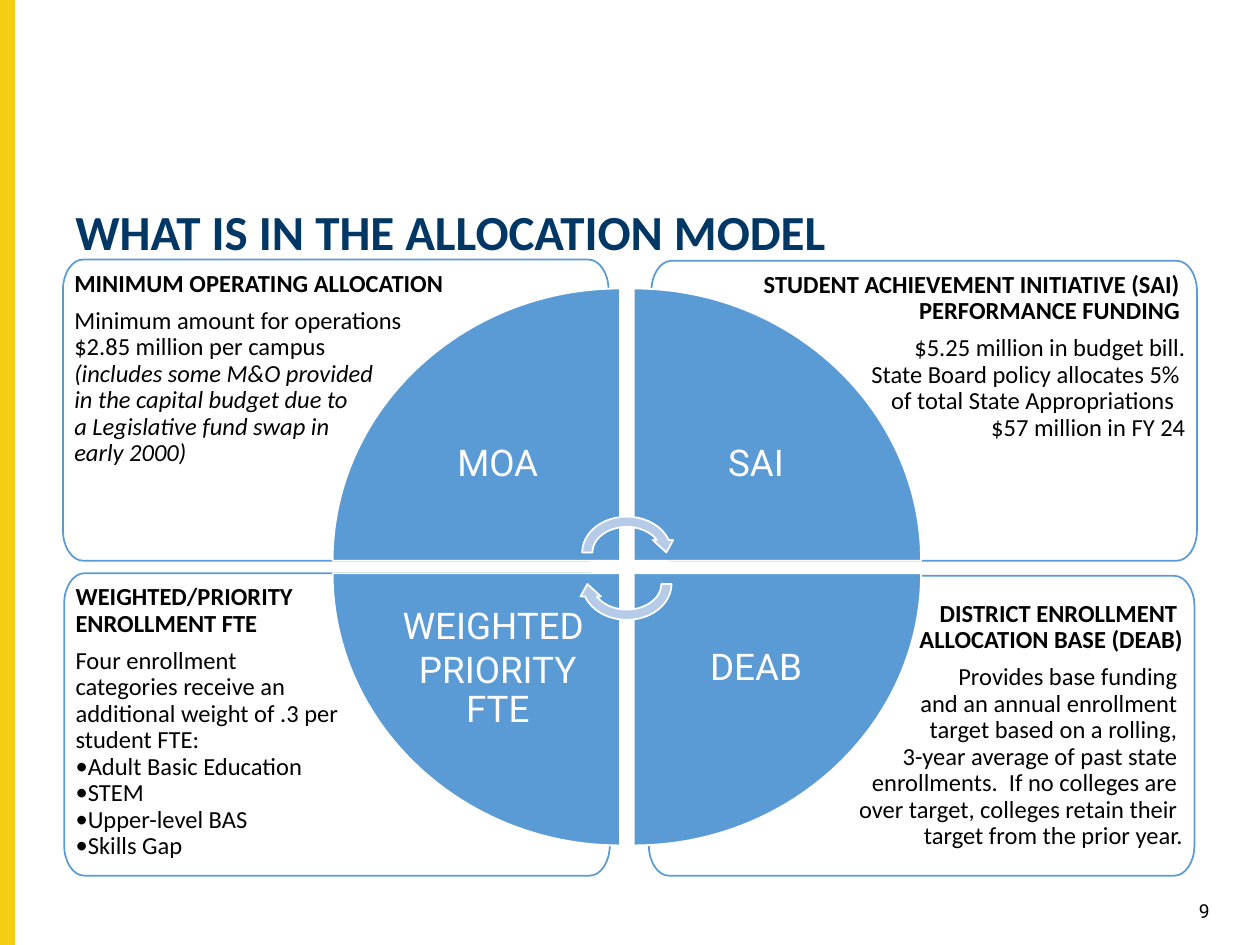
from dataclasses import dataclass

from lxml import etree
from pptx import Presentation
from pptx.dml.color import RGBColor
from pptx.enum.shapes import MSO_SHAPE
from pptx.enum.text import MSO_ANCHOR, PP_ALIGN
from pptx.oxml.ns import qn
from pptx.util import Inches, Pt

RECT = MSO_SHAPE.RECTANGLE
CIRCULAR_ARROW = MSO_SHAPE.CIRCULAR_ARROW
LEFT, CENTER, RIGHT = PP_ALIGN.LEFT, PP_ALIGN.CENTER, PP_ALIGN.RIGHT
TOP, MIDDLE = MSO_ANCHOR.TOP, MSO_ANCHOR.MIDDLE


@dataclass(frozen=True)
class Theme:
    accent: str = "F4CE12"
    title: str = "003764"
    text: str = "000000"
    white: str = "FFFFFF"
    blue: str = "5B9BD5"
    arrow: str = "B5CBE7"
    body_font: str = "Calibri"
    label_font: str = "Roboto"
    title_size: int = 28
    label_size: int = 21
    body_size: int = 14
    number_size: int = 11


class SlideBuilder:
    ARC = 0.55    # control point distance of a quarter arc, in radii

    def __init__(self, slide, theme):
        self.s, self.t = slide, theme

    def style(self, sp, fill, line):
        sp.shadow.inherit = False
        sp.fill.solid()
        sp.fill.fore_color.rgb = RGBColor.from_string(fill)
        sp.line.color.rgb = RGBColor.from_string(line)
        sp.line.width = Pt(1)

    def frame(self, sp, insets, anchor=TOP):
        tf = sp.text_frame
        left, top, right, bottom = (Inches(v) for v in insets)
        values = {"word_wrap": True, "vertical_anchor": anchor,
                  "margin_left": left, "margin_top": top,
                  "margin_right": right, "margin_bottom": bottom}
        for name, value in values.items():
            setattr(tf, name, value)
        return tf

    def paragraph(self, tf, content, font, color, align=LEFT, spacing=0.9,
                  after=0, bullet=False):
        """Content is a string or a list of (text, font overrides)."""
        p = tf.paragraphs[0]
        if p.runs:
            p = tf.add_paragraph()
        values = {"alignment": align, "line_spacing": spacing,
                  "space_before": Pt(0), "space_after": Pt(after)}
        for name, value in values.items():
            setattr(p, name, value)
        if bullet:
            pPr = p._p.get_or_add_pPr()
            pPr.set("marL", "0")
            pPr.set("indent", str(-Inches(0.31)))
            etree.SubElement(pPr, qn("a:buFont")).set("typeface", font["name"])
            etree.SubElement(pPr, qn("a:buChar")).set("char", "•")
        runs = [(content, {})] if isinstance(content, str) else content
        for text, extra in runs:
            for i, line in enumerate(text.split("\n")):
                if i:
                    p.add_line_break()
                if not line:
                    continue
                r = p.add_run()
                r.text = line
                for name, value in {**font, **extra}.items():
                    setattr(r.font, name, value)
                r.font.color.rgb = RGBColor.from_string(color)

    def shape(self, kind, box, fill, line, rotation=0):
        sp = self.s.shapes.add_shape(kind, *(Inches(v) for v in box))
        sp.rotation = rotation
        self.style(sp, fill, line)

    def outline(self, start, segments, fill, line):
        """Closed outline; a segment has one point (line) or three (curve)."""
        fb = self.s.shapes.build_freeform(*(Inches(v) for v in start))
        fb.add_line_segments([(Inches(x), Inches(y))
                              for seg in segments for x, y in seg])
        sp = fb.convert_to_shape()
        steps = iter(list(sp._element.iter(qn("a:lnTo"))))
        for seg in segments:
            first, *rest = [next(steps) for _ in seg]
            if rest:
                first.tag = qn("a:cubicBezTo")
                for step in rest:
                    first.append(step[0])
                    step.getparent().remove(step)
        path = next(sp._element.iter(qn("a:path")))
        etree.SubElement(path, qn("a:close"))
        self.style(sp, fill, line)
        return sp

    def arc(self, start, corner, end):
        """Quarter-ellipse curve bending towards a corner point."""
        c1, c2 = ([a + self.ARC * (b - a) for a, b in zip(p, corner)]
                  for p in (start, end))
        return [c1, c2, end]

    def text(self, box, content, font, color, align=LEFT, top=0.05):
        sp = self.s.shapes.add_textbox(*(Inches(v) for v in box))
        tf = self.frame(sp, (0.1, top, 0.1, 0.05))
        self.paragraph(tf, content, font, color, align)

    def card(self, box, insets, align, heading, body, bullets=()):
        x, y, w, h = box
        right, bottom, rx, ry = x + w, y + h, 0.16, 0.24
        segments = []
        for start, corner, end in (
                ((x, y + ry), (x, y), (x + rx, y)),
                ((right - rx, y), (right, y), (right, y + ry)),
                ((right, bottom - ry), (right, bottom), (right - rx, bottom)),
                ((x + rx, bottom), (x, bottom), (x, bottom - ry))):
            segments += [[start], self.arc(start, corner, end)]
        sp = self.outline((x, y + ry), segments[1:],
                          self.t.white, self.t.blue)
        color = sp.fill._xPr.find(qn("a:solidFill"))[0]
        etree.SubElement(color, qn("a:alpha")).set("val", "90000")
        tf = self.frame(sp, insets)
        font = {"name": self.t.body_font, "size": Pt(self.t.body_size)}
        for i, line in enumerate(heading, 1):
            self.paragraph(tf, line, {**font, "bold": True}, self.t.text,
                           align, after=6 if i == len(heading) else 0)
        for lines, bullet in ((body, False), (bullets, True)):
            for line in lines:
                self.paragraph(tf, line, font, self.t.text, align,
                               bullet=bullet)

    def quarter(self, corner, radii, dx, dy, lines):
        """Quarter ellipse; dx and dy (-1 or 1) point away from the centre."""
        (cx, cy), (rx, ry) = corner, radii
        x, y = cx + dx * rx, cy + dy * ry
        sp = self.outline((x, cy), [self.arc((x, cy), (x, y), (cx, y)),
                                    [(cx, cy)]], self.t.blue, self.t.white)
        near = 0.16
        insets = (0.5 if dx < 0 else near, 0.8 if dy < 0 else near,
                  0.5 if dx > 0 else near, 0.8 if dy > 0 else near)
        tf = self.frame(sp, insets, MIDDLE)
        font = {"name": self.t.label_font, "size": Pt(self.t.label_size)}
        for line, spacing in lines:
            self.paragraph(tf, line, font, self.t.white, CENTER, spacing)


def main():
    prs = Presentation()
    prs.slide_width, prs.slide_height = Inches(10), Inches(7.5)
    t = Theme()
    b = SlideBuilder(prs.slides.add_slide(prs.slide_layouts[6]), t)

    # Side band, title and page number
    b.shape(RECT, (0, 0, 0.11, 7.5), t.accent, t.accent)
    b.text((0.5, 1.6, 8.19, 0.65), "WHAT IS IN THE ALLOCATION MODEL",
           {"name": t.body_font, "size": Pt(t.title_size), "bold": True},
           t.title)
    b.text((9.19, 7.09, 0.51, 0.26), "9",
           {"name": t.label_font, "size": Pt(t.number_size)},
           t.text, RIGHT, top=0.07)

    # Description cards
    b.card((5.15, 4.57, 4.33, 2.38), (1.1, 0.2, 0.09, 0.09), RIGHT,
           ["DISTRICT ENROLLMENT \nALLOCATION BASE (DEAB)"],
           ["Provides base funding ", "and an annual enrollment ",
            "target based on a rolling, ", "3-year average of past state ",
            "enrollments.  If no colleges are ",
            "over target, colleges retain their \n"
            "target from the prior year."])
    b.card((0.51, 4.55, 4.33, 2.4), (0.09, 0.09, 1.2, 0.47), LEFT,
           ["WEIGHTED/PRIORITY \nENROLLMENT FTE"],
           ["Four enrollment", "categories receive an",
            "additional weight of .3 per \nstudent FTE:"],
           ["Adult Basic Education", "STEM", "Upper-level BAS", "Skills Gap"])
    b.card((5.17, 2.07, 4.33, 2.38), (0.5, 0.09, 0.09, 0.47), RIGHT,
           ["STUDENT ACHIEVEMENT INITIATIVE (SAI) ", "PERFORMANCE FUNDING "],
           ["$5.25 million in budget bill.",
            "State Board policy allocates 5% ",
            "of total State Appropriations  ", "$57 million in FY 24"])
    italic = {"italic": True}
    b.card((0.5, 2.06, 4.33, 2.39), (0.09, 0.09, 1, 0.47), LEFT,
           ["MINIMUM OPERATING ALLOCATION"],
           [[("Minimum amount for operations \n$2.85 million per campus \n",
              {}), ("(includes some M&O provided", italic)],
            [("in the capital budget due to", italic)],
            [("a Legislative fund swap in", italic)],
            [("early 2000)", italic)]])

    # Four quarters of the wheel
    xs, ys = {-1: 4.92, 1: 5.03}, {-1: 4.45, 1: 4.55}
    for dx, dy, lines in (
            (-1, -1, [("MOA", 0.9)]),
            (1, -1, [("SAI", 0.9)]),
            (1, 1, [("DEAB", 0.9)]),
            (-1, 1, [("WEIGHTED ", 0.9), ("PRIORITY", 1.0), ("FTE", 0.9)])):
        b.quarter((xs[dx], ys[dy]), (2.28, 2.16), dx, dy, lines)

    # Cycle arrows at the centre
    for top, rotation in ((4.06, 0), (4.31, 180)):
        b.shape(CIRCULAR_ARROW, (4.58, top, 0.79, 0.65), t.arrow, t.white,
                rotation)

    prs.save("out.pptx")


if __name__ == "__main__":
    main()
